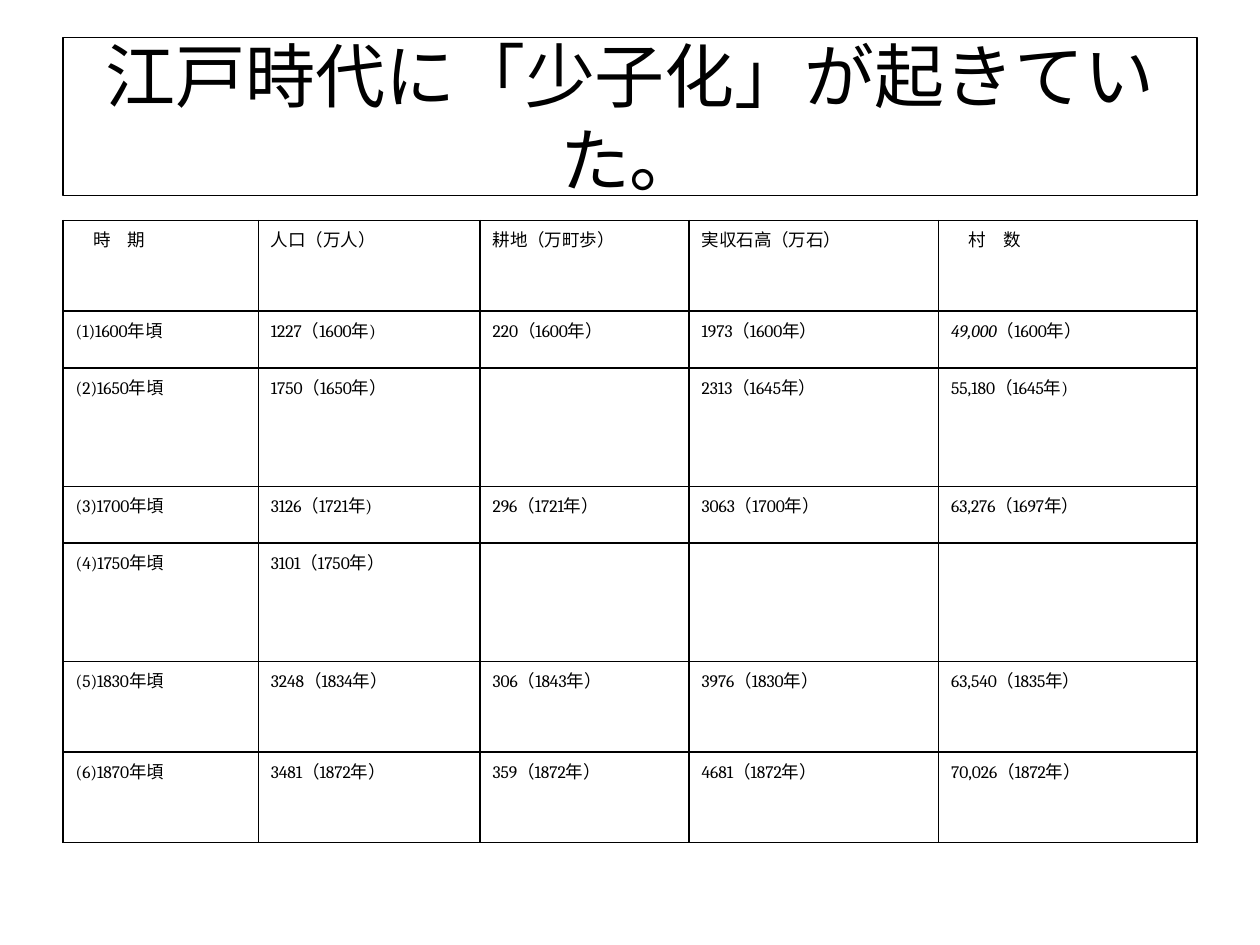
from lxml.etree import SubElement
from pptx import Presentation
from pptx.dml.color import RGBColor
from pptx.enum.text import MSO_ANCHOR, MSO_AUTO_SIZE, PP_ALIGN
from pptx.oxml.ns import qn
from pptx.util import Pt

TITLE = "江戸時代に「少子化」が起きていた。"
COLS = [111.6, 126.7, 119.5, 142.6, 147.6]
ROWS = [51.8, 32.4, 67.7, 32.4, 67.7, 51.8, 51.8]
DATA = [
    ["　時　期", "人口（万人）", "耕地（万町歩）", "実収石高（万石）", "　村　数"],
    ["(1)1600年頃", "1227（1600年)", "220（1600年）", "1973（1600年）", ("49,000", "（1600年）")],
    ["(2)1650年頃", "1750（1650年）", "", "2313（1645年）", "55,180（1645年)"],
    ["(3)1700年頃", "3126（1721年)", "296（1721年）", "3063（1700年）", "63,276（1697年）"],
    ["(4)1750年頃", "3101（1750年）", "", "", ""],
    ["(5)1830年頃", "3248（1834年）", "306（1843年）", "3976（1830年）", "63,540（1835年）"],
    ["(6)1870年頃", "3481（1872年）", "359（1872年）", "4681（1872年）", "70,026（1872年）"],
]


def color(text):
    return RGBColor.from_string(text)


class Page:
    """Holds the style and the current slide."""

    ink = "000000"
    head = "Calibri"
    body = "Cambria"

    def __init__(self, deck):
        self.slide = deck.slides.add_slide(deck.slide_layouts[5])

    def format(self, run, size, face):
        run.font.size = Pt(size)
        run.font.name = face
        run.font.color.rgb = color(self.ink)

    def title(self, text, left, top, width, height):
        shape = self.slide.shapes.title
        shape.left, shape.top = Pt(left), Pt(top)
        shape.width, shape.height = Pt(width), Pt(height)
        shape.line.color.rgb = color(self.ink)
        shape.line.width = Pt(0.75)
        frame = shape.text_frame
        frame.text = text
        frame.word_wrap = True
        frame.auto_size = MSO_AUTO_SIZE.NONE
        frame.vertical_anchor = MSO_ANCHOR.MIDDLE
        para = frame.paragraphs[0]
        para.alignment = PP_ALIGN.CENTER
        self.format(para.runs[0], 40, self.head)

    def border(self, cell):
        props = cell._tc.get_or_add_tcPr()
        for side in ("a:lnL", "a:lnR", "a:lnT", "a:lnB"):
            line = SubElement(props, qn(side), w=str(Pt(1)))
            fill = SubElement(line, qn("a:solidFill"))
            SubElement(fill, qn("a:srgbClr"), val=self.ink)

    def cell(self, cell, text):
        self.border(cell)
        cell.fill.background()
        if not text:
            return
        para = cell.text_frame.paragraphs[0]
        props = para._p.get_or_add_pPr()
        props.set("marL", str(Pt(27)))
        props.set("indent", str(Pt(-27)))
        if isinstance(text, tuple):
            lead, rest = text
            para.text = lead
            para.runs[0].font.italic = True
            para.add_run().text = rest
        else:
            para.text = text
        for run in para.runs:
            self.format(run, 10, self.body)

    def table(self, data, cols, rows, left, top):
        frame = self.slide.shapes.add_table(
            len(rows), len(cols), Pt(left), Pt(top), Pt(sum(cols)), Pt(sum(rows)))
        table = frame.table
        table.first_row = table.horz_banding = False
        for col, width in zip(table.columns, cols):
            col.width = Pt(width)
        for row, height, texts in zip(table.rows, rows, data):
            row.height = Pt(height)
            for cell, text in zip(row.cells, texts):
                self.cell(cell, text)


def main():
    deck = Presentation()
    deck.slide_width, deck.slide_height = Pt(720), Pt(540)
    page = Page(deck)
    page.title(TITLE, 36, 21.6, 648, 90)
    page.table(DATA, COLS, ROWS, 36, 126)
    deck.save("out.pptx")


if __name__ == "__main__":
    main()
